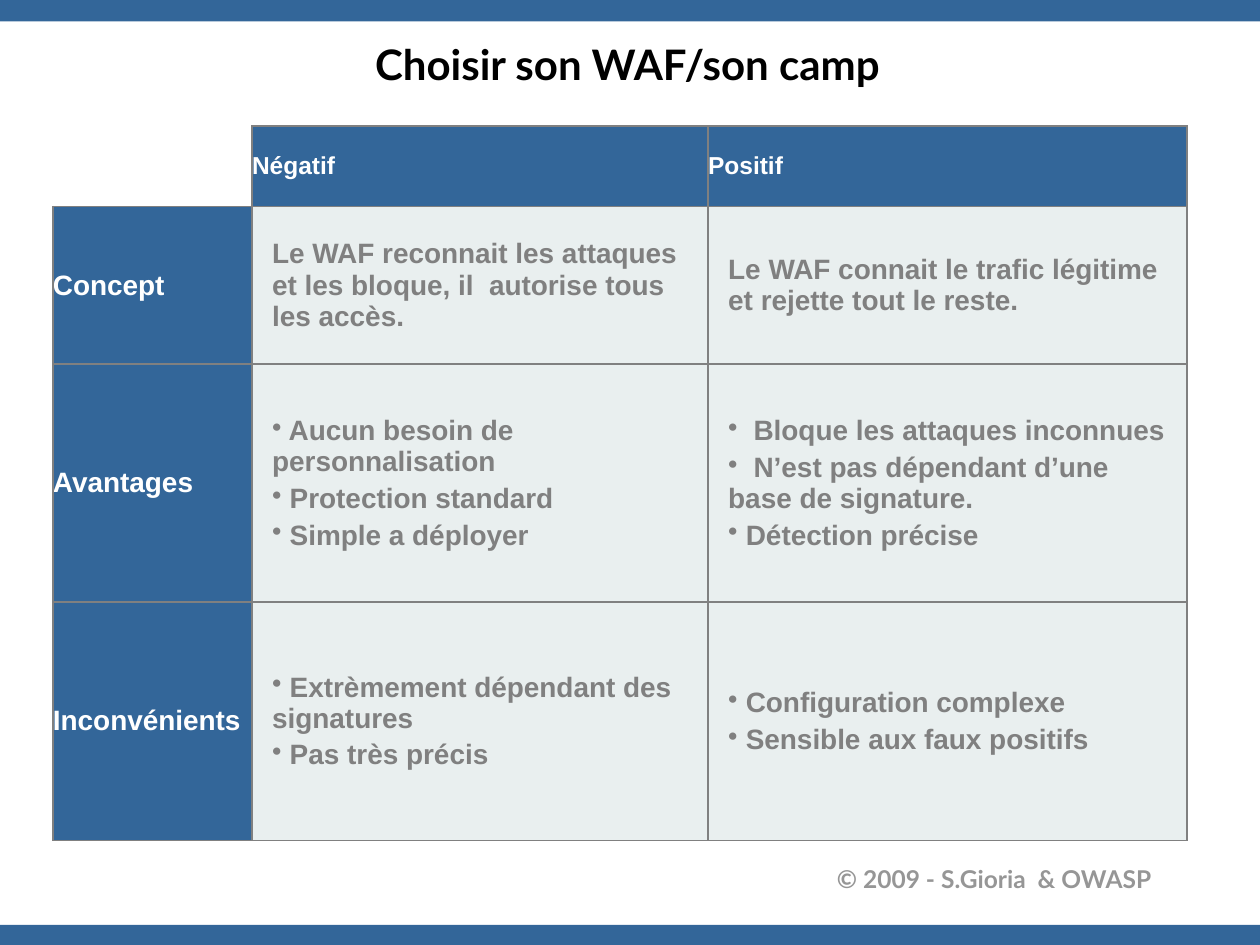
import pptx
import pptx.util
import pptx.dml.color
import pptx.enum.shapes
import pptx.enum.text
import pptx.oxml
import pptx.oxml.ns
from lxml import etree

Inches = pptx.util.Inches
Pt = pptx.util.Pt
ALIGN = pptx.enum.text.PP_ALIGN
MIDDLE = pptx.enum.text.MSO_ANCHOR.MIDDLE

COLORS = {
    "blue": "336699",
    "white": "FFFFFF",
    "black": "000000",
    "pale": "E9EFEF",
    "gray": "808080",
    "foot": "969696",
}

COLS = [1.58, 3.62, 3.8]
ROWS = [0.64, 1.25, 1.89, 1.89]

# One list per row; a list inside a row holds bullets
CELLS = [
    ["", "Négatif", "Positif"],
    ["Concept",
     "Le WAF reconnait les attaques et les bloque, il  autorise tous les accès.",
     "Le WAF connait le trafic légitime et rejette tout le reste."],
    ["Avantages",
     [" Aucun besoin de personnalisation", " Protection standard",
      " Simple a déployer"],
     ["  Bloque les attaques inconnues",
      "  N’est pas dépendant d’une base de signature.",
      " Détection précise"]],
    ["Inconvénients",
     [" Extrèmement dépendant des signatures", " Pas très précis"],
     [" Configuration complexe", " Sensible aux faux positifs"]],
]


def rgb(name):
    return pptx.dml.color.RGBColor.from_string(COLORS[name])


def style(font, face, size, color):
    font.name = face
    font.size = Pt(size)
    font.bold = True
    font.color.rgb = rgb(color)


def inset(box, left, top, right, bottom):
    box.margin_left, box.margin_top = Inches(left), Inches(top)
    box.margin_right, box.margin_bottom = Inches(right), Inches(bottom)


def add_bar(slide, top):
    bar = slide.shapes.add_shape(
        pptx.enum.shapes.MSO_SHAPE.RECTANGLE,
        Inches(0), Inches(top), Inches(10), Inches(0.17))
    bar.shadow.inherit = False
    bar.fill.solid()
    bar.fill.fore_color.rgb = rgb("blue")
    bar.line.fill.background()


def set_title(slide, text):
    title = slide.shapes.title
    title.left, title.top = Inches(0.5), Inches(0.17)
    title.width, title.height = Inches(9), Inches(0.67)
    frame = title.text_frame
    frame.text = text
    frame.word_wrap = True
    frame.auto_size = pptx.enum.text.MSO_AUTO_SIZE.NONE
    frame.vertical_anchor = MIDDLE
    inset(frame, 0.06, 0.06, 0.1, 0.06)
    para = frame.paragraphs[0]
    para.alignment = ALIGN.CENTER
    style(para.runs[0].font, "Lato", 24, "black")


def add_foot(slide, text):
    box = slide.shapes.add_textbox(
        Inches(5.33), Inches(6.86), Inches(3.85), Inches(0.35))
    frame = box.text_frame
    frame.text = text
    frame.word_wrap = True
    inset(frame, 0, 0, 0.04, 0)
    para = frame.paragraphs[0]
    para.alignment = ALIGN.RIGHT
    style(para.runs[0].font, "Lato", 14, "foot")


def set_edges(cell, shown):
    props = cell._tc.get_or_add_tcPr()
    for i, side in enumerate("LRTB"):
        edge = etree.Element(pptx.oxml.ns.qn("a:ln" + side), w=str(Pt(1)))
        if side in shown:
            fill = etree.SubElement(edge, pptx.oxml.ns.qn("a:solidFill"))
            etree.SubElement(fill, pptx.oxml.ns.qn("a:srgbClr"),
                             val=COLORS["gray"])
        else:
            etree.SubElement(edge, pptx.oxml.ns.qn("a:noFill"))
        props.insert(i, edge)


def add_bullet(para):
    props = para._p.get_or_add_pPr()
    props.set("marL", "0")
    props.set("indent", "0")
    etree.SubElement(props, pptx.oxml.ns.qn("a:buChar"), char="•")


def fill_cell(cell, text, size, color, back, pad):
    cell.fill.solid()
    cell.fill.fore_color.rgb = rgb(back)
    cell.vertical_anchor = MIDDLE
    inset(cell, pad, pad, pad, pad)
    listed = isinstance(text, list)
    cell.text_frame.text = "\n".join(text) if listed else text
    for i, para in enumerate(cell.text_frame.paragraphs):
        if i:
            para.space_before = Pt(3.2)
        if listed:
            add_bullet(para)
        for run in para.runs:
            style(run.font, "Arial", size, color)


def add_grid(slide):
    table = slide.shapes.add_table(
        len(ROWS), len(COLS), Inches(0.42), Inches(1),
        Inches(sum(COLS)), Inches(sum(ROWS))).table
    table.horz_banding = False
    for col, width in zip(table.columns, COLS):
        col.width = Inches(width)
    for row, height in zip(table.rows, ROWS):
        row.height = Inches(height)
    for r, line in enumerate(CELLS):
        for c, text in enumerate(line):
            cell = table.cell(r, c)
            corner = r == 0 and c == 0
            if corner:
                fill_cell(cell, text, 14, "black", "white", 0)
            elif r == 0 or c == 0:
                fill_cell(cell, text, 16 if r else 14, "white", "blue", 0)
            else:
                fill_cell(cell, text, 16, "gray", "pale", 0.16)
            set_edges(cell, "RB" if corner else "LRTB")


def main():
    deck = pptx.Presentation()
    deck.slide_width, deck.slide_height = Inches(10), Inches(7.5)
    slide = deck.slides.add_slide(deck.slide_layouts[5])

    # Frame of the page
    for top in (0, 7.34):
        add_bar(slide, top)
    add_foot(slide, "© 2009 - S.Gioria  & OWASP")

    # Title and comparison
    set_title(slide, "Choisir son WAF/son camp")
    add_grid(slide)
    deck.save("out.pptx")


if __name__ == "__main__":
    main()
